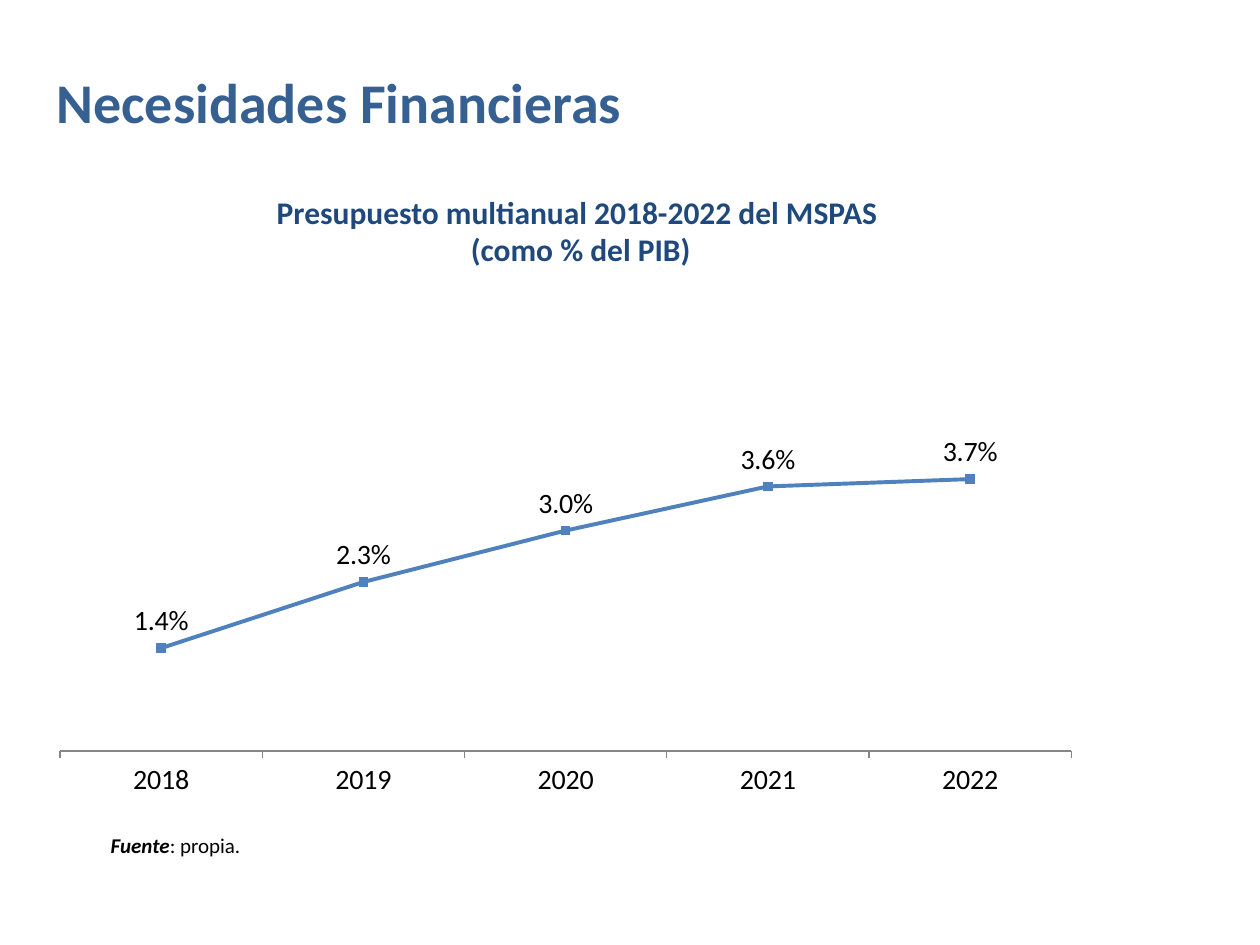
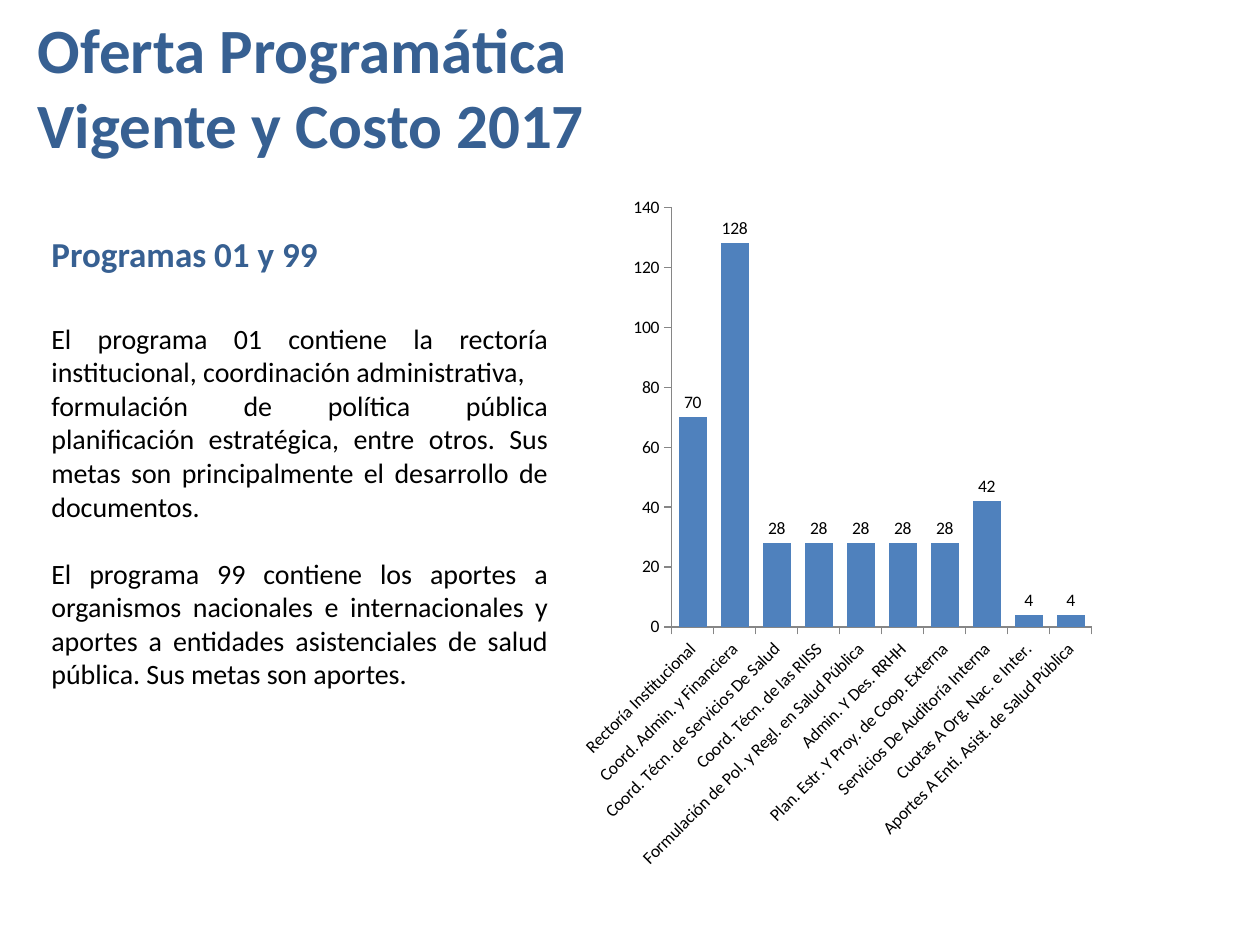
"""Build two slides on the financial needs and programme costs of MSPAS."""
import pptx
import pptx.chart.data
import pptx.dml.color
import pptx.enum.chart
import pptx.enum.text
import pptx.oxml
import pptx.oxml.ns
import pptx.util

Inches, Pt = pptx.util.Inches, pptx.util.Pt
RGB = pptx.dml.color.RGBColor.from_string
XL = pptx.enum.chart
ALIGN = pptx.enum.text.PP_ALIGN
ANCHOR = pptx.enum.text.MSO_ANCHOR
FONT = "Calibri"
COLORS = {"title": "376092", "heading": "1F497D", "text": "000000",
          "series": "4F81BD", "axis": "868686"}


def add_text(slide, box, paragraphs, size, color="text", bold=False,
             align=ALIGN.LEFT, anchor=ANCHOR.TOP, wrap=True):
    sp = slide.shapes.add_textbox(*[Inches(v) for v in box])
    tf = sp.text_frame
    tf.word_wrap = wrap
    tf.vertical_anchor = anchor
    for i, text in enumerate(paragraphs):
        p = tf.paragraphs[0] if i == 0 else tf.add_paragraph()
        p.text = text
        p.alignment = align
        p.font.name = FONT
        p.font.size = Pt(size)
        p.font.bold = bold
        p.font.color.rgb = RGB(COLORS[color])
    return tf


def add_chart(slide, kind, box, plot_box, categories, values, size, number_format, label_position):
    data = pptx.chart.data.CategoryChartData(number_format=number_format)
    data.categories = categories
    data.add_series("Series 1", values)
    chart = slide.shapes.add_chart(kind, *[Inches(v) for v in box], data).chart
    chart.has_legend = False
    chart.has_title = False
    chart.font.name = FONT
    chart.font.size = Pt(size)
    chart.font.color.rgb = RGB(COLORS["text"])
    for axis in (chart.category_axis, chart.value_axis):
        axis.has_major_gridlines = False
        axis.major_tick_mark = XL.XL_TICK_MARK.OUTSIDE
        axis.minor_tick_mark = XL.XL_TICK_MARK.NONE
        axis.format.line.color.rgb = RGB(COLORS["axis"])
        axis.format.line.width = Pt(0.75)
    chart.value_axis.minimum_scale = 0
    chart.value_axis.tick_labels.number_format = number_format
    chart.value_axis.tick_labels.number_format_is_linked = False
    plot = chart.plots[0]
    plot.vary_by_categories = False
    plot.has_data_labels = True
    labels = plot.data_labels
    labels.show_value = True
    labels.position = label_position
    labels.number_format = number_format
    labels.number_format_is_linked = False
    area = chart.element.find(".//" + pptx.oxml.ns.qn("c:plotArea"))
    for old in area.findall(pptx.oxml.ns.qn("c:layout")):
        area.remove(old)
    sizes = "".join(f'<c:{tag} val="{v}"/>' for tag, v in zip("xywh", plot_box))
    area.insert(0, pptx.oxml.parse_xml(
        f'<c:layout {pptx.oxml.ns.nsdecls("c")}><c:manualLayout><c:layoutTarget val="inner"/>'
        f'<c:xMode val="edge"/><c:yMode val="edge"/>{sizes}</c:manualLayout></c:layout>'))
    return chart


prs = pptx.Presentation()
prs.slide_width, prs.slide_height = Inches(10), Inches(7.5)
blank = prs.slide_layouts[6]
title_style = {"color": "title", "bold": True, "anchor": ANCHOR.MIDDLE}

s = prs.slides.add_slide(blank)
budget = add_chart(s, XL.XL_CHART_TYPE.LINE_MARKERS, (0.31, 0, 8.36, 6.48),
                   (0.02, 0.02, 0.96, 0.9), [str(y) for y in range(2018, 2023)],
                   [0.014, 0.023, 0.03, 0.036, 0.037], 16, "0.0%",
                   XL.XL_LABEL_POSITION.ABOVE)
budget.value_axis.maximum_scale = 0.1
budget.value_axis.visible = False
line = budget.plots[0].series[0]
line.smooth = False
line.format.line.color.rgb = RGB(COLORS["series"])
line.format.line.width = Pt(2.25)
line.marker.style = XL.XL_MARKER_STYLE.SQUARE
line.marker.size = 5
line.marker.format.fill.solid()
line.marker.format.fill.fore_color.rgb = RGB(COLORS["series"])
line.marker.format.line.color.rgb = RGB(COLORS["series"])

add_text(s, (0.86, 1.48, 7.5, 0.71),
         ["Presupuesto multianual 2018-2022 del MSPAS \v(como % del PIB)"],
         18, "heading", True, ALIGN.CENTER)
add_text(s, (0.35, 0.21, 5.91, 1.18), ["Necesidades Financieras"], 32, **title_style)
tf = add_text(s, (0.78, 6.56, 1.24, 0.3), ["Fuente"], 12, wrap=False)
p = tf.paragraphs[0]
p.runs[0].font.bold = p.runs[0].font.italic = True
p.add_run().text = ": propia."

s = prs.slides.add_slide(blank)
add_text(s, (0.2, 0.02, 5.21, 1.32), ["Oferta Programática Vigente y Costo 2017"],
         36, **title_style)
add_text(s, (0.31, 1.8, 2.33, 0.44), ["Programas 01 y 99"], 20, "title", True, wrap=False)
tf = add_text(s, (0.31, 2.5, 4.14, 3.6), [
    "El programa 01 contiene la rectoría institucional, coordinación administrativa,",
    "formulación de política pública planificación estratégica, entre otros. "
    "Sus metas son principalmente el desarrollo de documentos.",
    "El programa 99 contiene los aportes a organismos nacionales e internacionales y "
    "aportes a entidades asistenciales de salud pública. Sus metas son aportes.",
], 16, align=ALIGN.JUSTIFY)
tf.paragraphs[2].space_before = Pt(19.2)

costs = {
    "Rectoría Institucional": 70,
    "Coord. Admin. y Financiera": 128,
    "Coord. Técn. de Servicios De Salud": 28,
    "Coord. Técn. de las RIISS": 28,
    "Formulación de Pol. y Regl. en Salud Pública": 28,
    "Admin. Y Des. RRHH": 28,
    "Plan. Estr. Y Proy. de Coop. Externa": 28,
    "Servicios De Auditoría Interna": 42,
    "Cuotas A Org. Nac. e Inter.": 4,
    "Aportes A Enti. Asist. de Salud Pública": 4,
}
cost_chart = add_chart(s, XL.XL_CHART_TYPE.COLUMN_CLUSTERED, (4.53, 1.48, 4.22, 5.55),
                       (0.19, 0.03, 0.79, 0.6), list(costs), list(costs.values()),
                       10, "#,##0", XL.XL_LABEL_POSITION.OUTSIDE_END)
cost_chart.value_axis.maximum_scale = 140
cost_chart.value_axis.major_unit = 20
cost_chart.category_axis.tick_labels.font.size = Pt(10)
body = cost_chart.category_axis._element.find(
    pptx.oxml.ns.qn("c:txPr")).find(pptx.oxml.ns.qn("a:bodyPr"))
body.set("rot", "-2700000")
body.set("vert", "horz")
cost_chart.plots[0].gap_width = 50
bars = cost_chart.plots[0].series[0]
bars.format.fill.solid()
bars.format.fill.fore_color.rgb = RGB(COLORS["series"])

prs.save("out.pptx")
